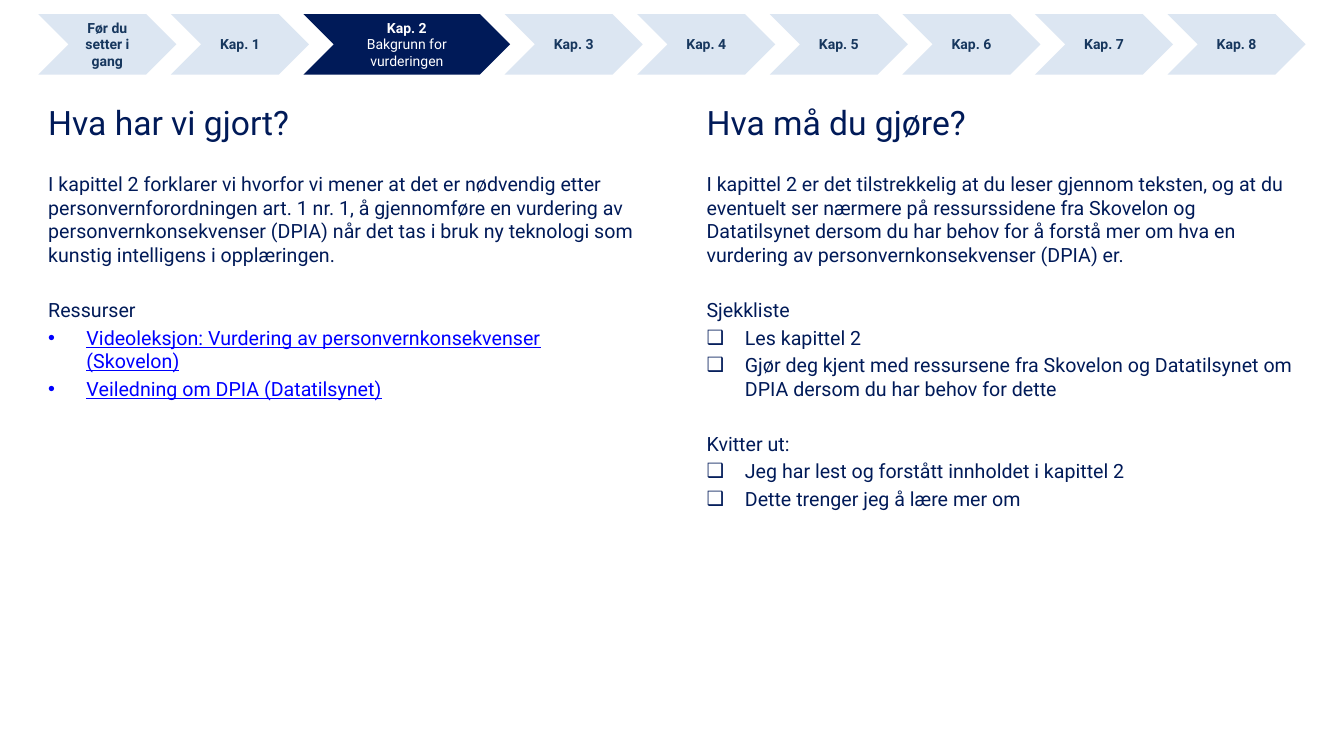
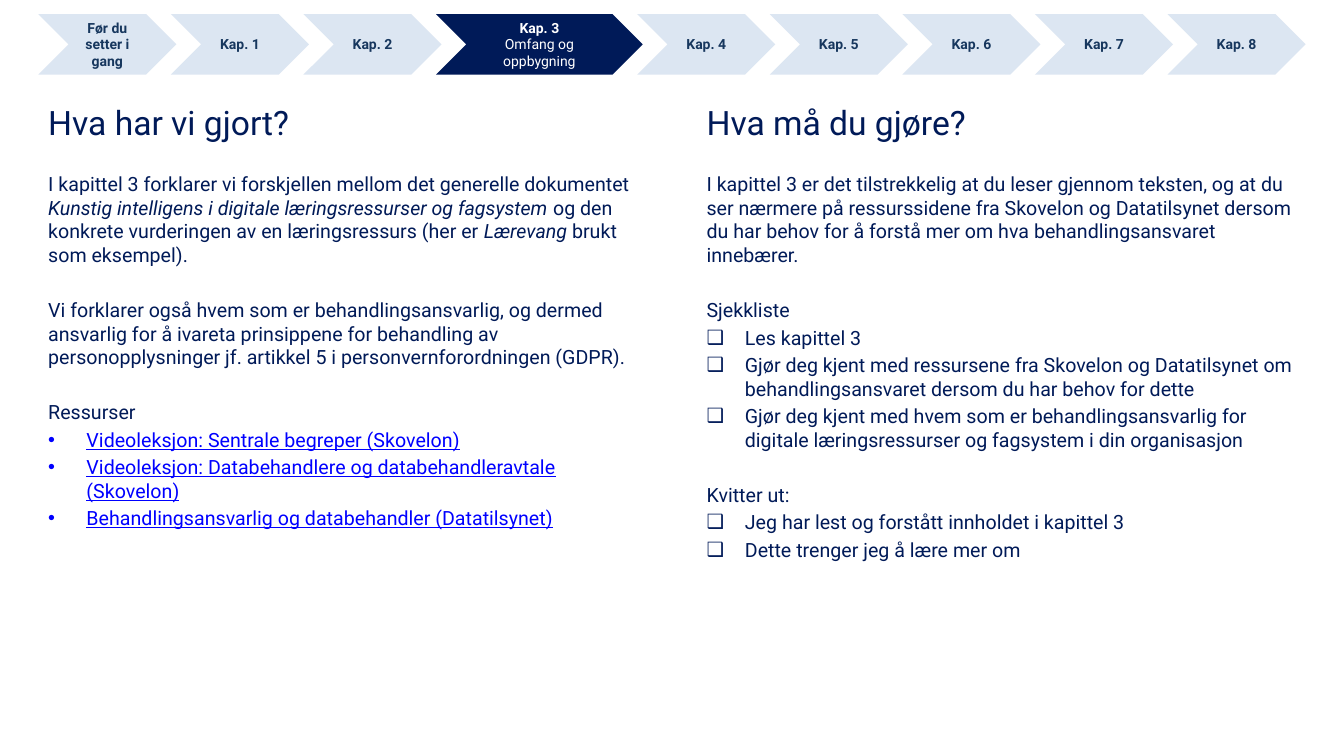
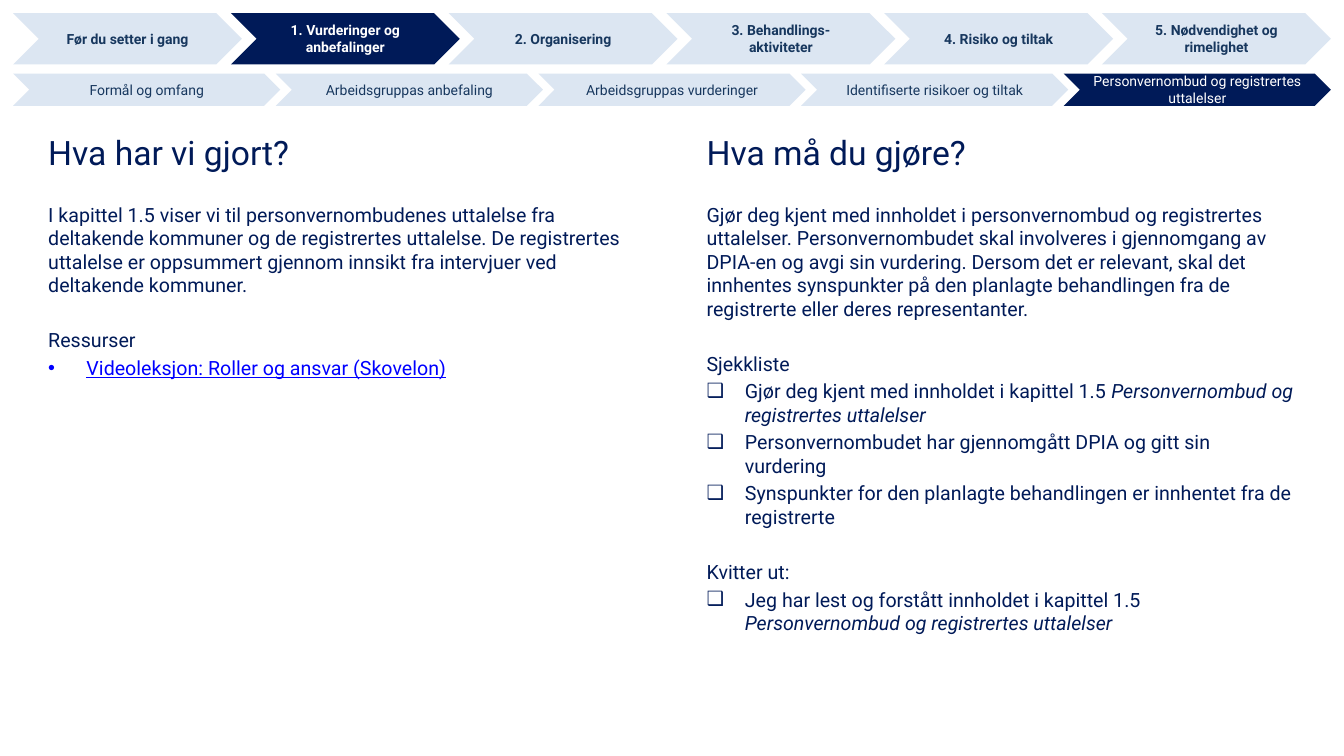
from lxml import etree
from pptx import Presentation
from pptx.dml.color import RGBColor
from pptx.enum import shapes, text
from pptx.oxml import ns
from pptx.util import Inches, Pt

COLORS = {"navy": "001A58", "pale": "DCE6F2", "slate": "17375E", "white": "FFFFFF", "link": "0000FF"}
FONT = "Roboto"
SLIDE_WIDTH = 13.33
COLUMN_LEFTS = (0.38, 6.91)
COLUMN_WIDTH = 6.04
COLUMN_TITLES = ("Hva har vi gjort?", "Hva må du gjøre?")
INDENT = 0.38
GROUP_GAP, LINE_GAP = 22.6, 2.8
DOT, CHECK = "•", "❑"
LEARN_MORE = "Dette trenger jeg å lære mer om"
CHAPTERS = ["Før du setter i gang"] + [f"Kap. {number}" for number in range(1, 9)]


def style(font, size, color, bold=False):
    font.name = FONT
    font.size = Pt(size)
    font.bold = bold
    font.color.rgb = RGBColor.from_string(COLORS[color])


def add_bullet(para, mark, color):
    """Give the paragraph a hanging bullet; call before setting its font."""
    props = para._p.get_or_add_pPr()
    props.set("marL", str(Inches(INDENT)))
    props.set("indent", str(-Inches(INDENT)))
    bullet_color = etree.SubElement(props, ns.qn("a:buClr"))
    etree.SubElement(bullet_color, ns.qn("a:srgbClr"), val=COLORS[color])
    etree.SubElement(props, ns.qn("a:buFont"), typeface="Arial")
    etree.SubElement(props, ns.qn("a:buChar"), char=mark)


def chapter_row(current, subtitle):
    """The chapter arrows, with the current one wider and carrying its subtitle."""
    return {
        "left": 0.38, "top": 0.14, "height": 0.6, "bold": True, "current": current,
        "widths": [2.05 if index == current else 1.37 for index in range(len(CHAPTERS))],
        "labels": [[label, subtitle] if index == current else [label]
                   for index, label in enumerate(CHAPTERS)],
    }


# Each column is a list of groups: (opening paragraph, bullet mark, bulleted lines).
# Asterisks enclose italics.
PAGES = [
    {
        "rows": [chapter_row(2, "Bakgrunn for vurderingen")],
        "title_top": 0.91, "body_height": 4.92,
        "columns": [
            [
                ("I kapittel 2 forklarer vi hvorfor vi mener at det er nødvendig etter "
                 "personvernforordningen art. 1 nr. 1, å gjennomføre en vurdering av "
                 "personvernkonsekvenser (DPIA) når det tas i bruk ny teknologi som "
                 "kunstig intelligens i opplæringen.", None, []),
                ("Ressurser", DOT, [
                    "Videoleksjon: Vurdering av personvernkonsekvenser (Skovelon)",
                    "Veiledning om DPIA (Datatilsynet)",
                ]),
            ],
            [
                ("I kapittel 2 er det tilstrekkelig at du leser gjennom teksten, og at du "
                 "eventuelt ser nærmere på ressurssidene fra Skovelon og Datatilsynet dersom "
                 "du har behov for å forstå mer om hva en vurdering av "
                 "personvernkonsekvenser (DPIA) er.", None, []),
                ("Sjekkliste", CHECK, [
                    "Les kapittel 2",
                    "Gjør deg kjent med ressursene fra Skovelon og Datatilsynet om DPIA "
                    "dersom du har behov for dette",
                ]),
                ("Kvitter ut:", CHECK, ["Jeg har lest og forstått innholdet i kapittel 2", LEARN_MORE]),
            ],
        ],
    },
    {
        "rows": [chapter_row(3, "Omfang og oppbygning")],
        "title_top": 0.91, "body_height": 4.92,
        "columns": [
            [
                ("I kapittel 3 forklarer vi forskjellen mellom det generelle dokumentet "
                 "*Kunstig intelligens i digitale læringsressurser og fagsystem* og den "
                 "konkrete vurderingen av en læringsressurs (her er *Lærevang *brukt som "
                 "eksempel).", None, []),
                ("Vi forklarer også hvem som er behandlingsansvarlig, og dermed ansvarlig "
                 "for å ivareta prinsippene for behandling av personopplysninger jf. "
                 "artikkel 5 i personvernforordningen (GDPR).", None, []),
                ("Ressurser", DOT, [
                    "Videoleksjon: Sentrale begreper (Skovelon)",
                    "Videoleksjon: Databehandlere og databehandleravtale (Skovelon)",
                    "Behandlingsansvarlig og databehandler (Datatilsynet)",
                ]),
            ],
            [
                ("I kapittel 3 er det tilstrekkelig at du leser gjennom teksten, og at du "
                 "ser nærmere på ressurssidene fra Skovelon og Datatilsynet dersom du har "
                 "behov for å forstå mer om hva behandlingsansvaret innebærer.", None, []),
                ("Sjekkliste", CHECK, [
                    "Les kapittel 3",
                    "Gjør deg kjent med ressursene fra Skovelon og Datatilsynet om "
                    "behandlingsansvaret dersom du har behov for dette",
                    "Gjør deg kjent med hvem som er behandlingsansvarlig for digitale "
                    "læringsressurser og fagsystem i din organisasjon",
                ]),
                ("Kvitter ut:", CHECK, ["Jeg har lest og forstått innholdet i kapittel 3", LEARN_MORE]),
            ],
        ],
    },
    {
        "rows": [
            {
                "left": 0.13, "top": 0.13, "height": 0.51, "bold": True, "current": 1,
                "widths": [2.27] * 6,
                "labels": [
                    ["Før du setter i gang"], ["1. Vurderinger og anbefalinger"],
                    ["2. Organisering"], ["3. Behandlings-aktiviteter"],
                    ["4. Risiko og tiltak"], ["5. Nødvendighet og rimelighet"],
                ],
            },
            {
                "left": 0.13, "top": 0.73, "height": 0.32, "bold": False, "current": 4,
                "widths": [2.65] * 5,
                "labels": [
                    ["Formål og omfang"], ["Arbeidsgruppas anbefaling"],
                    ["Arbeidsgruppas vurderinger"], ["Identifiserte risikoer og tiltak"],
                    ["Personvernombud og registrertes uttalelser"],
                ],
            },
        ],
        "title_top": 1.21, "body_height": 4.51,
        "columns": [
            [
                ("I kapittel 1.5 viser vi til personvernombudenes uttalelse fra deltakende "
                 "kommuner og de registrertes uttalelse. De registrertes uttalelse er "
                 "oppsummert gjennom innsikt fra intervjuer ved deltakende kommuner.", None, []),
                ("Ressurser", DOT, ["Videoleksjon: Roller og ansvar (Skovelon)"]),
            ],
            [
                ("Gjør deg kjent med innholdet i personvernombud og registrertes uttalelser. "
                 "Personvernombudet skal involveres i gjennomgang av DPIA-en og avgi sin "
                 "vurdering. Dersom det er relevant, skal det innhentes synspunkter på den "
                 "planlagte behandlingen fra de registrerte eller deres representanter.", None, []),
                ("Sjekkliste", CHECK, [
                    "Gjør deg kjent med innholdet i kapittel 1.5 "
                    "*Personvernombud og registrertes uttalelser*",
                    "Personvernombudet har gjennomgått DPIA og gitt sin vurdering",
                    "Synspunkter for den planlagte behandlingen er innhentet fra de registrerte",
                ]),
                ("Kvitter ut:", CHECK, [
                    "Jeg har lest og forstått innholdet i kapittel 1.5 "
                    "*Personvernombud og registrertes uttalelser*",
                ]),
            ],
        ],
    },
]

deck = Presentation()
deck.slide_width = Inches(SLIDE_WIDTH)
deck.slide_height = Inches(7.5)

for content in PAGES:
    page = deck.slides.add_slide(deck.slide_layouts[6])

    for row in content["rows"]:
        # The arrows overlap evenly so that the row has equal side margins.
        widths = row["widths"]
        overlap = (sum(widths) - (SLIDE_WIDTH - 2 * row["left"])) / (len(widths) - 1)
        left = row["left"]
        for index, (width, lines) in enumerate(zip(widths, row["labels"])):
            is_current = index == row["current"]
            arrow = page.shapes.add_shape(
                shapes.MSO_SHAPE.CHEVRON, Inches(left), Inches(row["top"]),
                Inches(width), Inches(row["height"]))
            arrow.shadow.inherit = False
            arrow.fill.solid()
            arrow.fill.fore_color.rgb = RGBColor.from_string(COLORS["navy" if is_current else "pale"])
            arrow.line.fill.background()
            frame = arrow.text_frame
            frame.word_wrap = True
            frame.vertical_anchor = text.MSO_ANCHOR.MIDDLE
            for number, line in enumerate(lines):
                para = frame.add_paragraph() if number else frame.paragraphs[0]
                para.text = line
                para.alignment = text.PP_ALIGN.CENTER
                style(para.font, 10, "white" if is_current else "slate", row["bold"] and number == 0)
            left += width - overlap

    for left, title, groups in zip(COLUMN_LEFTS, COLUMN_TITLES, content["columns"]):
        title_top = content["title_top"]
        box = page.shapes.add_textbox(Inches(left), Inches(title_top), Inches(COLUMN_WIDTH), Inches(0.6))
        box.text_frame.word_wrap = True
        box.text_frame.vertical_anchor = text.MSO_ANCHOR.MIDDLE
        para = box.text_frame.paragraphs[0]
        para.text = title
        style(para.font, 24, "navy")

        box = page.shapes.add_textbox(
            Inches(left), Inches(title_top + 0.75), Inches(COLUMN_WIDTH), Inches(content["body_height"]))
        frame = box.text_frame
        frame.word_wrap = True
        for group_number, (opening, mark, items) in enumerate(groups):
            for number, line in enumerate([opening] + items):
                is_first = group_number == number == 0
                para = frame.paragraphs[0] if is_first else frame.add_paragraph()
                if not is_first:
                    para.space_before = Pt(LINE_GAP if number else GROUP_GAP)
                is_link = number > 0 and mark == DOT
                color = "link" if is_link else "navy"
                if number:
                    add_bullet(para, mark, color)
                style(para.font, 14, color)
                if is_link:
                    para.font.underline = True
                for part_number, part in enumerate(line.split("*")):
                    if part:
                        span = para.add_run()
                        span.text = part
                        if part_number % 2:
                            span.font.italic = True

deck.save("out.pptx")
